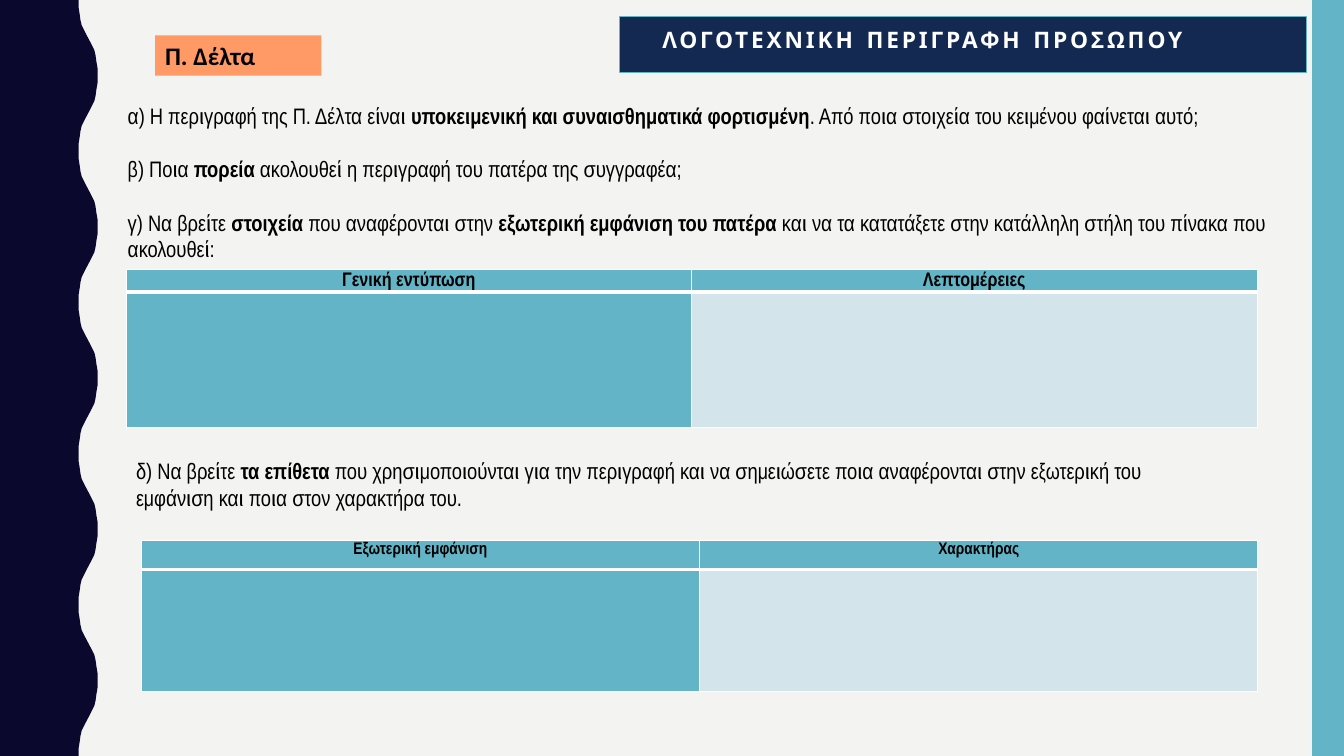
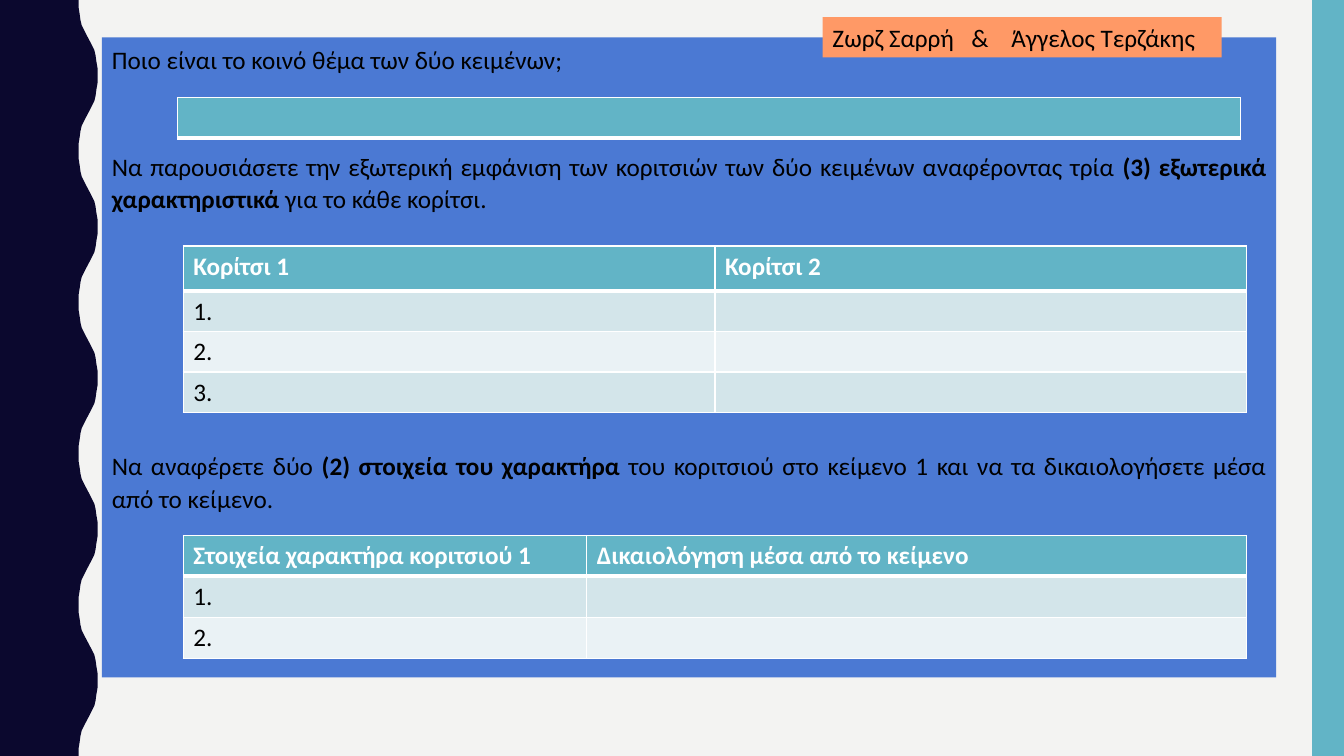
"""Build two worksheet slides about describing persons in literature."""
from dataclasses import dataclass
from typing import Any, Optional

from lxml.etree import SubElement
from pptx import Presentation
from pptx.dml.color import RGBColor
from pptx.enum.shapes import MSO_SHAPE
from pptx.enum.text import MSO_ANCHOR, PP_ALIGN
from pptx.oxml.ns import qn
from pptx.util import Cm, Pt

PAPER = RGBColor(0xF3, 0xF3, 0xF2)
NIGHT = RGBColor(0x0B, 0x08, 0x2E)
NAVY = RGBColor(0x14, 0x29, 0x52)
TEAL = RGBColor(0x62, 0xB4, 0xC6)
BLUE = RGBColor(0x4B, 0x79, 0xD3)
ORANGE = RGBColor(0xFF, 0x99, 0x66)
PALE = RGBColor(0xD3, 0xE5, 0xEA)
PALER = RGBColor(0xEA, 0xF2, 0xF5)
BLACK = RGBColor(0, 0, 0)
WHITE = RGBColor(0xFF, 0xFF, 0xFF)

WIDTH, HEIGHT = 33.87, 19.05
HALF_WAVES = 10
HALF_WAVE = HEIGHT / HALF_WAVES
WAVE_LOW, WAVE_HIGH = 1.98, 2.46
WAVE_QUARTER = [(0, 1.98), (0.18, 1.98), (0.36, 2.01), (0.51, 2.03),
                (0.64, 2.06), (0.74, 2.11), (0.84, 2.16)]


@dataclass(frozen=True)
class Box:
    """Place and size in centimetres."""
    left: float
    top: float
    width: float
    height: float

    def lengths(self) -> tuple:
        """Return the four values as slide lengths."""
        return tuple(Cm(v) for v in (self.left, self.top, self.width, self.height))


@dataclass(frozen=True)
class TextStyle:
    """Font and paragraph format of a text."""
    font: dict[str, Any]
    paragraph: dict[str, Any]
    color: RGBColor = BLACK


@dataclass(frozen=True)
class Grid:
    """A table: place, column widths, row heights, texts and cell colours."""
    box: Box
    columns: list[float]
    rows: list[float]
    texts: list[list[str]]
    fills: list[list[RGBColor]]
    header: TextStyle
    body: TextStyle
    margins: dict[str, Any]


CALIBRI = {"name": "Calibri", "size": Pt(18), "bold": False}
CALIBRI_BOLD = {**CALIBRI, "bold": True}
NARROW = {"name": "Arial Narrow", "size": Pt(16), "bold": False}
LEFT = {"alignment": PP_ALIGN.LEFT}
SPACED = {"line_spacing": 1.15, "space_after": Pt(10)}
CENTERED = {"alignment": PP_ALIGN.CENTER, **SPACED}
JUSTIFIED = {"alignment": PP_ALIGN.JUSTIFY, "line_spacing": 1.07, "space_after": Pt(8)}

TITLE = TextStyle({"name": "Comic Neue", "size": Pt(16.2), "bold": True},
                  {**LEFT, **SPACED}, WHITE)
QUESTION = TextStyle(NARROW, LEFT)
TASK = TextStyle(CALIBRI, JUSTIFIED)
LABEL = TextStyle(CALIBRI, LEFT)
LABEL_BOLD = TextStyle(CALIBRI_BOLD, LEFT)
WHITE_HEADER = TextStyle(CALIBRI_BOLD, LEFT, WHITE)

TIGHT = {"margin_left": Cm(0.18), "margin_right": Cm(0.18),
         "margin_top": 0, "margin_bottom": 0}


def apply(target: Any, values: dict[str, Any]) -> None:
    """Set each named attribute on the target."""
    for name, value in values.items():
        setattr(target, name, value)


def write(text_frame: Any, texts: list[str], style: TextStyle,
          gaps: Optional[list[float]] = None) -> None:
    """Write paragraphs; every second part between bars is bold."""
    text_frame.word_wrap = True
    for index, text in enumerate(texts):
        paragraph = text_frame.paragraphs[0] if index == 0 else text_frame.add_paragraph()
        apply(paragraph, style.paragraph)
        if gaps:
            paragraph.space_before = Pt(gaps[index])
        for part_index, part in enumerate(text.split("|")):
            run = paragraph.add_run()
            run.text = part
            apply(run.font, style.font)
            run.font.color.rgb = style.color
            if part_index % 2:
                run.font.bold = True


def paint(shape: Any, color: RGBColor) -> None:
    """Give a shape a flat fill with no line and no shadow."""
    shape.shadow.inherit = False
    shape.fill.solid()
    shape.fill.fore_color.rgb = color
    shape.line.fill.background()


def add_rectangle(slide: Any, box: Box, color: RGBColor) -> Any:
    """Add a flat rectangle."""
    shape = slide.shapes.add_shape(MSO_SHAPE.RECTANGLE, *box.lengths())
    paint(shape, color)
    return shape


def add_bands(slide: Any) -> None:
    """Draw the wavy left band and the straight right band."""
    mirror = WAVE_LOW + WAVE_HIGH
    half = WAVE_QUARTER + [(HALF_WAVE - y, mirror - x) for y, x in reversed(WAVE_QUARTER)]
    points = [(Cm(mirror - x if index % 2 else x), Cm(index * HALF_WAVE + y))
              for index in range(HALF_WAVES) for y, x in half]
    builder = slide.shapes.build_freeform(0, 0)
    builder.add_line_segments(points + [(0, Cm(HEIGHT))], close=True)
    paint(builder.convert_to_shape(), NIGHT)
    add_rectangle(slide, Box(33.07, 0, 0.8, HEIGHT), TEAL)


def add_label(slide: Any, box: Box, text: str, style: TextStyle,
              tabs: tuple[float, ...] = ()) -> None:
    """Add an orange author label with optional tab stops."""
    text_frame = add_rectangle(slide, box, ORANGE).text_frame
    write(text_frame, [text], style)
    if tabs:
        properties = text_frame.paragraphs[0]._p.get_or_add_pPr()
        tab_list = SubElement(properties, qn("a:tabLst"))
        for position in tabs:
            SubElement(tab_list, qn("a:tab"), pos=str(Cm(position)), algn="l")


def add_questions(slide: Any, box: Box, texts: list[str], gaps: list[float]) -> None:
    """Add a text box of questions."""
    text_frame = slide.shapes.add_textbox(*box.lengths()).text_frame
    write(text_frame, texts, QUESTION, gaps)


def add_borders(cell: Any, widths: dict[str, float]) -> None:
    """Draw white cell borders with the given widths in points."""
    properties = cell._tc.get_or_add_tcPr()
    for side, width in widths.items():
        line = SubElement(properties, qn(f"a:ln{side}"), w=str(Pt(width)))
        fill = SubElement(line, qn("a:solidFill"))
        SubElement(fill, qn("a:srgbClr"), val=str(WHITE))


def add_grid(slide: Any, grid: Grid) -> None:
    """Add a table with a thick rule under its header row."""
    frame = slide.shapes.add_table(len(grid.rows), len(grid.columns), *grid.box.lengths())
    table = frame.table
    for column, width in zip(table.columns, grid.columns):
        column.width = Cm(width)
    for row_index, height in enumerate(grid.rows):
        table.rows[row_index].height = Cm(height)
        for column_index, text in enumerate(grid.texts[row_index]):
            cell = table.cell(row_index, column_index)
            apply(cell, grid.margins)
            add_borders(cell, {"L": 1, "R": 1, "T": 3 if row_index == 1 else 1,
                               "B": 3 if row_index == 0 else 1})
            cell.fill.solid()
            cell.fill.fore_color.rgb = grid.fills[row_index][column_index]
            if text:
                write(cell.text_frame, [text], grid.body if row_index else grid.header)


def sorting_grid(box: Box, header_height: float, headings: list[str], size: float) -> Grid:
    """Describe a two-column table with one empty answer row."""
    header = TextStyle({**NARROW, "size": Pt(size), "bold": True}, CENTERED)
    return Grid(box, [box.width / 2] * 2, [header_height, box.height - header_height],
                [headings, ["", ""]], [[TEAL, TEAL], [TEAL, PALE]], header, QUESTION, TIGHT)


def numbered_grid(box: Box, columns: list[float], header_height: float,
                  headings: list[str], count: int) -> Grid:
    """Describe a banded table with numbered answer rows."""
    row_height = (box.height - header_height) / count
    texts = [headings] + [[f"{number}.", ""] for number in range(1, count + 1)]
    fills = [[TEAL] * 2] + [[PALER if index % 2 else PALE] * 2 for index in range(count)]
    return Grid(box, columns, [header_height] + [row_height] * count, texts, fills,
                WHITE_HEADER, LABEL, {})


def add_title(slide: Any, box: Box, text: str) -> None:
    """Place and format the title placeholder."""
    title = slide.shapes.title
    apply(title, dict(zip(("left", "top", "width", "height"), box.lengths())))
    title.fill.solid()
    title.fill.fore_color.rgb = NAVY
    title.line.color.rgb = TEAL
    title.line.width = Pt(0.75)
    apply(title.text_frame, {"vertical_anchor": MSO_ANCHOR.TOP, "margin_left": Cm(1.07)})
    write(title.text_frame, [text], TITLE)
    for run in title.text_frame.paragraphs[0].runs:
        run.font._element.set("spc", "200")


def build_description_slide(presentation: Any) -> None:
    """Build the slide with questions on one text."""
    slide = presentation.slides.add_slide(presentation.slide_layouts[5])
    add_bands(slide)
    add_title(slide, Box(15.62, 0.42, 17.3, 1.4), "ΛΟΓΟΤΕΧΝΙΚΗ ΠΕΡΙΓΡΑΦΗ ΠΡΟΣΩΠΟΥ")
    add_grid(slide, sorting_grid(Box(3.18, 6.79, 28.5, 3.99), 0.56,
                                 ["Γενική εντύπωση", "Λεπτομέρειες"], 14))
    add_questions(slide, Box(2.97, 2.44, 29.95, 4.37), [
        "α) Η περιγραφή της Π. Δέλτα είναι |υποκειμενική και συναισθηματικά φορτισμένη|"
        ". Από ποια στοιχεία του κειμένου φαίνεται αυτό;",
        "β) Ποια |πορεία| ακολουθεί η περιγραφή του πατέρα της συγγραφέα;",
        "γ) Να βρείτε |στοιχεία| που αναφέρονται στην |εξωτερική εμφάνιση του πατέρα"
        "| και να τα κατατάξετε στην κατάλληλη στήλη του πίνακα που ακολουθεί:",
    ], [0, 19, 19])
    add_questions(slide, Box(3.18, 11.4, 27.51, 1.63), [
        "δ) Να βρείτε |τα επίθετα| που χρησιμοποιούνται για την περιγραφή και να σημειώσετε "
        "ποια αναφέρονται στην εξωτερική του εμφάνιση και ποια στον χαρακτήρα του.",
    ], [0])
    add_grid(slide, sorting_grid(Box(3.56, 13.61, 28.14, 3.81), 0.74,
                                 ["Εξωτερική εμφάνιση", "Χαρακτήρας"], 12))
    add_label(slide, Box(3.91, 0.89, 4.19, 1.02), "Π. Δέλτα", LABEL_BOLD)


def build_comparison_slide(presentation: Any) -> None:
    """Build the slide that compares two texts."""
    slide = presentation.slides.add_slide(presentation.slide_layouts[6])
    add_bands(slide)
    panel = add_rectangle(slide, Box(2.57, 0.94, 29.59, 16.13), BLUE)
    panel.text_frame.vertical_anchor = MSO_ANCHOR.TOP
    write(panel.text_frame, [
        "Ποιο είναι το κοινό θέμα των δύο κειμένων;",
        "Να παρουσιάσετε την εξωτερική εμφάνιση των κοριτσιών των δύο κειμένων αναφέροντας "
        "τρία |(3) εξωτερικά χαρακτηριστικά| για το κάθε κορίτσι.",
        "Να αναφέρετε δύο |(2) στοιχεία του χαρακτήρα| του κοριτσιού στο κείμενο 1 και να τα "
        "δικαιολογήσετε μέσα από το κείμενο.",
    ], TASK, [7, 45, 160])
    add_grid(slide, numbered_grid(Box(4.62, 6.2, 26.8, 4.19), [13.4, 13.4], 1.14,
                                  ["Κορίτσι 1", "Κορίτσι 2"], 3))
    add_grid(slide, numbered_grid(
        Box(4.62, 13.49, 26.8, 3.1), [10.17, 16.63], 1.03,
        ["Στοιχεία χαρακτήρα κοριτσιού 1", "Δικαιολόγηση μέσα από το κείμενο"], 2))
    add_grid(slide, Grid(Box(4.47, 2.46, 26.8, 1.02), [26.8], [1.02], [[""]], [[TEAL]],
                         WHITE_HEADER, LABEL, {}))
    add_label(slide, Box(20.73, 0.43, 10.06, 1.02), "Ζωρζ Σαρρή\t&\tΆγγελος Τερζάκης",
              LABEL, (3.5, 4.51))


def main() -> None:
    """Build and save the presentation."""
    presentation = Presentation()
    apply(presentation, {"slide_width": Cm(WIDTH), "slide_height": Cm(HEIGHT)})
    background = presentation.slide_master.background.fill
    background.solid()
    background.fore_color.rgb = PAPER
    build_description_slide(presentation)
    build_comparison_slide(presentation)
    presentation.save("out.pptx")


if __name__ == "__main__":
    main()
